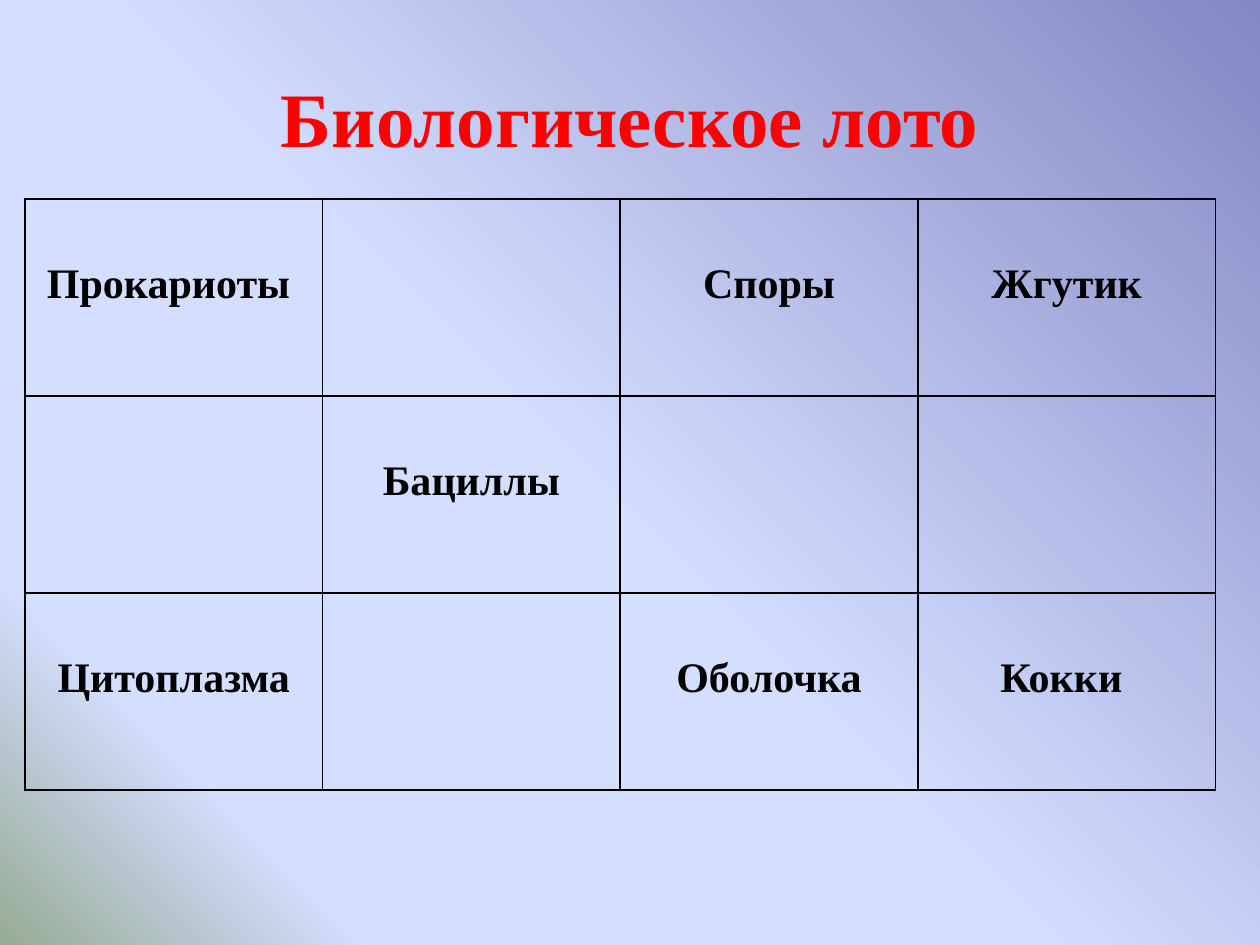
from copy import deepcopy

from lxml import etree
from pptx import Presentation
from pptx.dml.color import RGBColor
from pptx.enum.text import MSO_ANCHOR, PP_ALIGN
from pptx.oxml.ns import qn
from pptx.util import Pt

CENTER = PP_ALIGN.CENTER
MIDDLE = MSO_ANCHOR.MIDDLE
TOP = MSO_ANCHOR.TOP

STOPS = [(0, "96AB94"), (0.17, "D4DEFF"), (0.47, "D4DEFF"), (1, "8488C4")]
LOTTO_ROWS = [
    ["Прокариоты ", "", "Споры", "Жгутик"],
    ["", "Бациллы", "", ""],
    ["Цитоплазма", "", "Оболочка", "Кокки "],
]


def color(value):
    """Turn a hex string into a colour."""
    return RGBColor.from_string(value)


def assign(target, values):
    """Set each attribute of the target from a dict."""
    for name, value in values.items():
        setattr(target, name, value)


class SlideBuilder:
    """Hold the style and the current slide."""

    font = "Times New Roman"
    title_color = "FF0000"
    ink = "000000"
    border_width = Pt(1)
    title_frame = {"word_wrap": True, "vertical_anchor": MIDDLE}
    cell_format = {
        "margin_left": Pt(5),
        "margin_right": Pt(5),
        "margin_top": Pt(31.7),
        "margin_bottom": Pt(0),
        "vertical_anchor": TOP,
    }

    def __init__(self, deck):
        """Add a blank slide to the deck."""
        self.slide = deck.slides.add_slide(deck.slide_layouts[6])

    def background(self, stops, angle):
        """Fill the background with a linear gradient."""
        fill = self.slide.background.fill
        fill.gradient()
        fill.gradient_angle = angle
        stop_list = self.slide.element.find(".//" + qn("a:gsLst"))
        while len(stop_list) < len(stops):
            stop_list.append(deepcopy(stop_list[0]))
        for stop, (position, value) in zip(fill.gradient_stops, stops):
            stop.position = position
            stop.color.rgb = color(value)

    def add_line(self, para, text, size, ink, spacing=1.0):
        """Put one centred bold line into a paragraph."""
        assign(para, {"alignment": CENTER, "line_spacing": spacing})
        span = para.add_run()
        span.text = text
        assign(span.font, {"name": self.font, "size": Pt(size), "bold": True})
        span.font.color.rgb = color(ink)

    def title(self, text, left, top, width, height):
        """Add the slide heading."""
        box = self.slide.shapes.add_textbox(Pt(left), Pt(top), Pt(width), Pt(height))
        assign(box.text_frame, self.title_frame)
        self.add_line(box.text_frame.paragraphs[0], text, 44, self.title_color)

    def border(self, cell):
        """Draw a solid line on all four sides of a cell."""
        properties = cell._tc.get_or_add_tcPr()
        for index, side in enumerate(("a:lnL", "a:lnR", "a:lnT", "a:lnB")):
            line = etree.Element(qn(side), w=str(self.border_width))
            solid = etree.SubElement(line, qn("a:solidFill"))
            etree.SubElement(solid, qn("a:srgbClr"), val=self.ink)
            properties.insert(index, line)

    def table(self, rows, left, top, width, height):
        """Add an unfilled table with an even grid."""
        frame = self.slide.shapes.add_table(
            len(rows), len(rows[0]), Pt(left), Pt(top), Pt(width), Pt(height)
        )
        grid = frame.table
        assign(grid, {"first_row": False, "horz_banding": False})
        for row, words in zip(grid.rows, rows):
            for cell, word in zip(row.cells, words):
                assign(cell, self.cell_format)
                cell.fill.background()
                self.border(cell)
                if word:
                    self.add_line(cell.text_frame.paragraphs[0], word, 24, self.ink, 1.15)


def main():
    """Build and save the deck."""
    deck = Presentation()
    assign(deck, {"slide_width": Pt(720), "slide_height": Pt(540)})
    builder = SlideBuilder(deck)
    builder.background(STOPS, 45)
    builder.title("Биологическое лото", 36, 21.6, 648, 90)
    builder.table(LOTTO_ROWS, 14.2, 113.8, 680.4, 337.6)
    deck.save("out.pptx")


if __name__ == "__main__":
    main()
